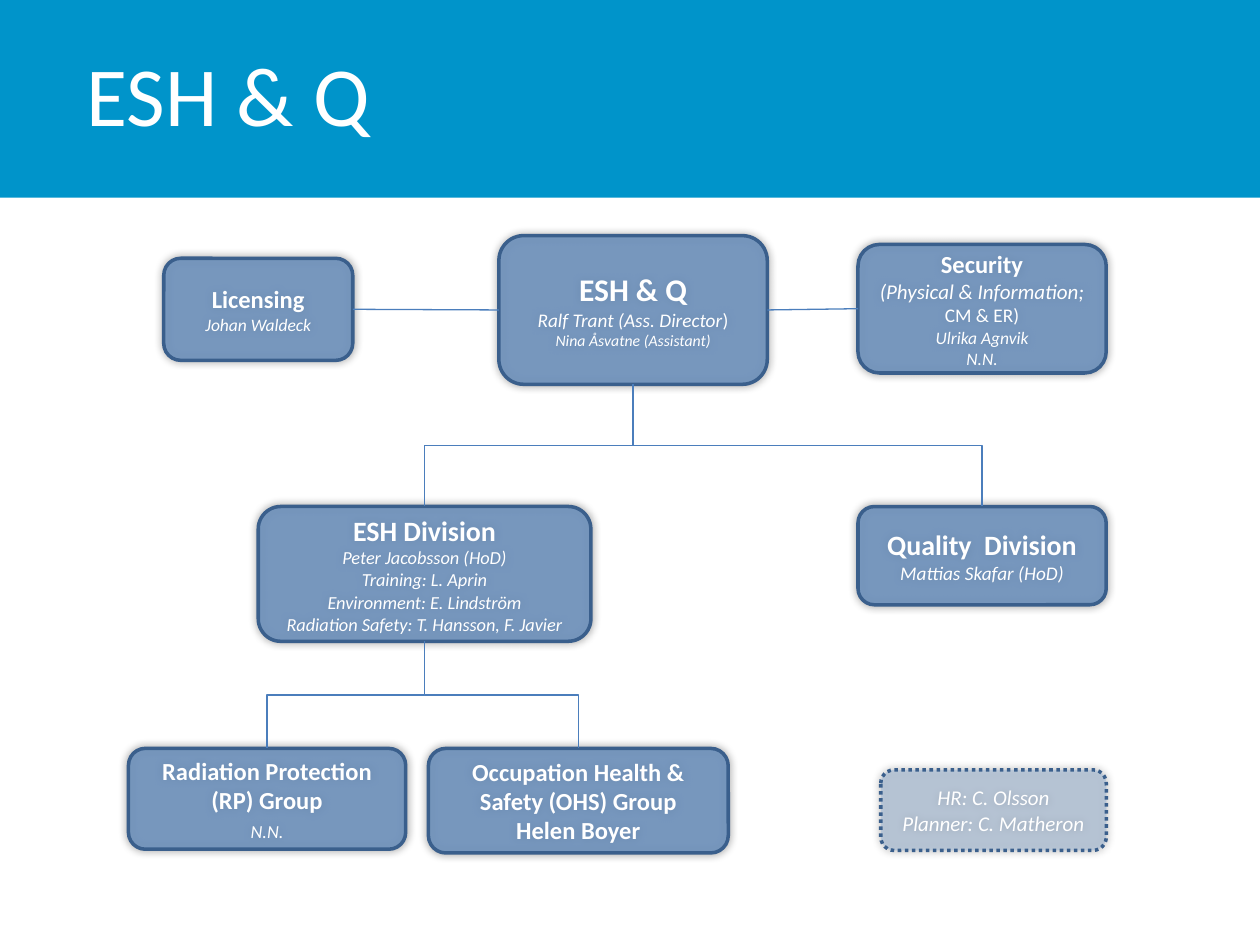
import pptx
import pptx.util
import pptx.dml.color
import pptx.enum.dml
import pptx.enum.shapes
import pptx.enum.text
import pptx.oxml.ns
import lxml.etree

Inches, Pt = pptx.util.Inches, pptx.util.Pt
SHAPE = pptx.enum.shapes.MSO_SHAPE
LINK = pptx.enum.shapes.MSO_CONNECTOR
qn = pptx.oxml.ns.qn


def paint(color, value):
    color.rgb = pptx.dml.color.RGBColor.from_string(value)


def style(run, size, bold=False, italic=False):
    run.font.name = "Calibri"
    run.font.size = Pt(size)
    run.font.bold = bold
    run.font.italic = italic
    paint(run.font.color, "FFFFFF")


prs = pptx.Presentation()
prs.slide_width, prs.slide_height = Inches(10), Inches(7.5)
slide = prs.slides.add_slide(prs.slide_layouts[6])
shapes = slide.shapes

# Title band
band = shapes.add_shape(SHAPE.RECTANGLE, 0, 0, Inches(10), Inches(1.57))
band.shadow.inherit = False
band.fill.solid()
paint(band.fill.fore_color, "0094CA")
band.line.fill.background()

title = shapes.add_textbox(Inches(0.59), Inches(0.29), Inches(7.49), Inches(0.91))
title.text_frame.word_wrap = True
title.text_frame.text = "ESH & Q"
style(title.text_frame.paragraphs[0].runs[0], 48)

# Boxes: place, then lines of text, size and style (b bold, i italic)
units = {
    "chief": ((3.96, 1.87, 2.13, 1.18), [
        ("ESH & Q", 18, "b"), ("Ralf Trant (Ass. Director", 11, "i"),
        ("Nina Åsvatne (Assistant)", 9, "i")]),
    "licence": ((1.3, 2.05, 1.5, 0.81), [
        ("Licensing", 14, "b"), ("Johan Waldeck", 10, "i")]),
    "guard": ((6.81, 1.94, 1.97, 1.02), [
        ("Security", 14, "b"), ("(Physical & Information;", 12, "i"),
        ("CM & ER)", 11, ""), ("Ulrika Agnvik", 10, "i"), ("N.N.", 10, "i")]),
    "safety": ((2.05, 4.02, 2.64, 1.07), [
        ("ESH Division", 16, "b"), ("Peter Jacobsson (HoD)", 10.5, "i"),
        ("Training: L. Aprin", 10.5, "i"),
        ("Environment: E. Lindström", 10.5, "i"),
        ("Radiation Safety: T. Hansson, F. Javier", 10.5, "i")]),
    "quality": ((6.81, 4.02, 1.97, 0.78), [
        ("Quality  Division", 16, "b"), ("Mattias Skafar (HoD)", 11, "i")]),
    "rays": ((1.02, 5.94, 2.2, 0.8), [
        ("Radiation Protection (RP) Group", 14, "b"), ("N.N.", 10.5, "i")]),
    "health": ((3.4, 5.94, 2.38, 0.83), [
        ("Occupation Health & Safety (OHS) Group", 14, "b"),
        ("Helen Boyer", 14, "b")]),
    "staff": ((6.99, 6.11, 1.79, 0.64), [
        ("HR: C. Olsson", 12, "i"), ("Planner: C. Matheron", 12, "i")]),
}
boxes = {}
for name, (place, lines) in units.items():
    box = shapes.add_shape(SHAPE.ROUNDED_RECTANGLE, *map(Inches, place))
    boxes[name] = box
    fill, alpha = ("95B3D7", 45) if name == "staff" else ("4F81BD", 64)
    box.fill.solid()
    paint(box.fill.fore_color, fill)
    tint = box.fill._xPr.find(qn("a:solidFill"))[0]
    lxml.etree.SubElement(tint, qn("a:alpha"), val=str(alpha * 1000))
    paint(box.line.color, "3A5F8C")
    box.line.width = Pt(2)
    if name == "staff":
        box.line.dash_style = pptx.enum.dml.MSO_LINE.ROUND_DOT

    # Soft glow-like shadow
    box.shadow.inherit = False
    effect = box._element.spPr.find(qn("a:effectLst"))
    glow = lxml.etree.SubElement(effect, qn("a:outerShdw"), blurRad=str(Pt(5)),
                                 dist="0", dir="0", rotWithShape="0")
    black = lxml.etree.SubElement(glow, qn("a:srgbClr"), val="000000")
    lxml.etree.SubElement(black, qn("a:alpha"), val="40000")

    frame = box.text_frame
    frame.word_wrap = True
    frame.vertical_anchor = pptx.enum.text.MSO_ANCHOR.MIDDLE
    frame.text = "\n".join(text for text, size, look in lines)
    for para, (text, size, look) in zip(frame.paragraphs, lines):
        para.alignment = pptx.enum.text.PP_ALIGN.CENTER
        style(para.runs[0], size, look == "b", look == "i")

# Upright closing bracket, and a little air above the open post
end = boxes["chief"].text_frame.paragraphs[1].add_run()
end.text = ")"
style(end, 11)
boxes["rays"].text_frame.paragraphs[1].space_before = Pt(3)

# Links: from box and side, to box and side
links = [("chief", 1, "licence", 3), ("guard", 1, "chief", 3),
         ("chief", 2, "safety", 0), ("chief", 2, "quality", 0),
         ("safety", 2, "rays", 0), ("safety", 2, "health", 0)]
for start, side, goal, port in links:
    bent = side == 2
    link = shapes.add_connector(LINK.ELBOW if bent else LINK.STRAIGHT, 0, 0, 0, 0)
    link.begin_connect(boxes[start], side)
    link.end_connect(boxes[goal], port)
    paint(link.line.color, "4B7EBC")
    link.line.width = Pt(0.75)
    props = link._element.spPr
    lxml.etree.SubElement(props, qn("a:effectLst"))
    if bent:
        # Turn the elbow so that it leaves downwards
        right = link.end_x > link.begin_x
        wide, high = link.width, link.height
        left = link.left + (wide - high) // 2
        top = link.top + (high - wide) // 2
        link.left, link.top, link.width, link.height = left, top, high, wide
        frame = props.find(qn("a:xfrm"))
        frame.set("rot", "16200000" if right else "5400000")
        frame.set("flipH", "1" if right else "0")
        frame.set("flipV", "0")

prs.save("out.pptx")
